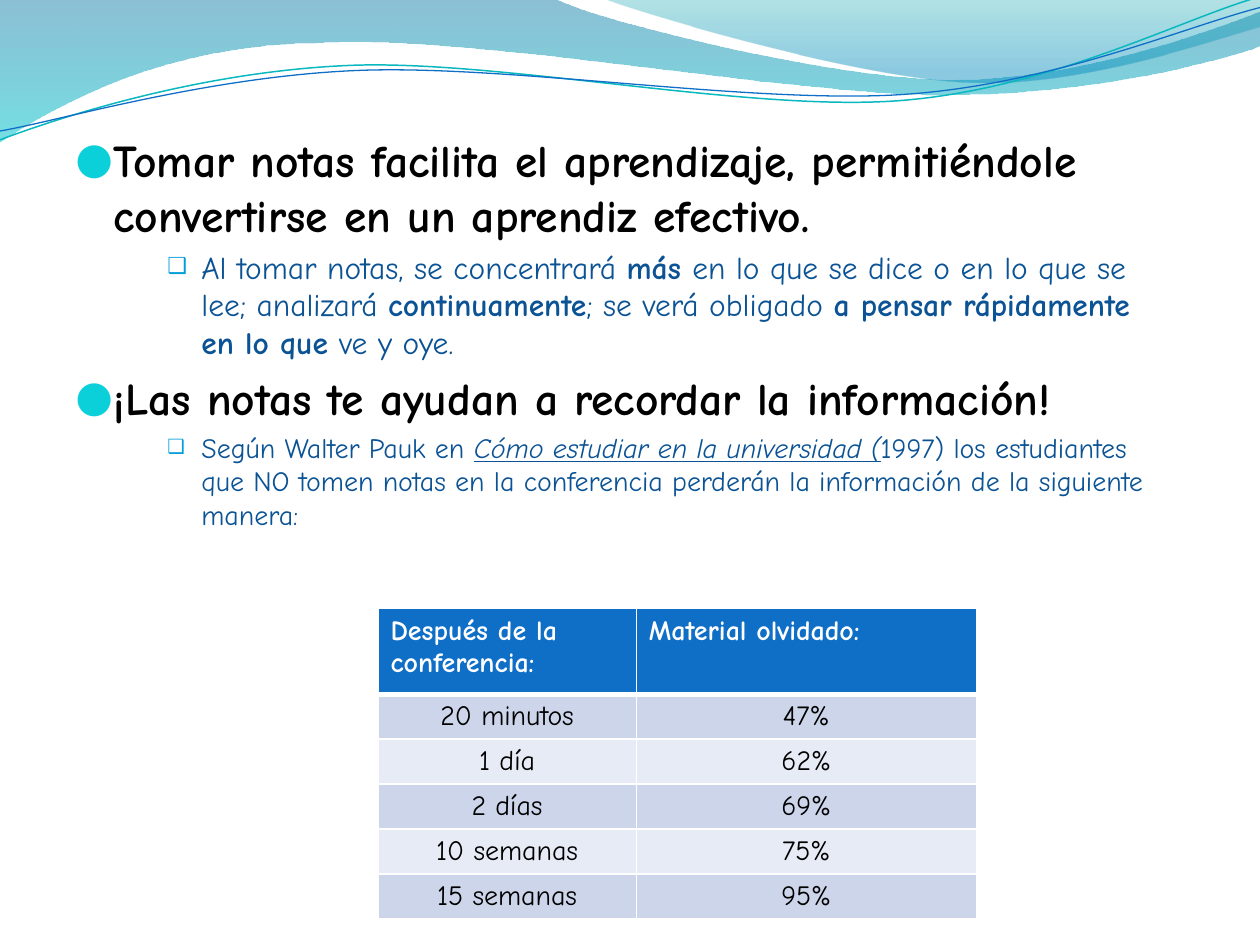
from dataclasses import dataclass

from lxml.etree import SubElement
from pptx import Presentation
from pptx.dml.color import RGBColor as RGB
from pptx.enum.text import PP_ALIGN as Align
from pptx.oxml.ns import qn
from pptx.util import Inches, Pt

FONT = "Comic Neue"
COLORS = {
    "black": "000000", "white": "FFFFFF", "navy": "0B5394", "blue": "0F6FC6",
    "cyan": "0BD0D9", "sky": "009DD9", "teal": "0AB8BF",
    "band_dark": "CCD5EA", "band_light": "E7EBF5",
}


@dataclass
class Stop:
    color: str
    position: float
    opacity: int


@dataclass
class Wave:
    """Start point, then segments: 2 numbers for a line, 6 for a Bézier curve."""
    start: tuple
    segments: list
    stops: tuple = ()
    line: str = ""
    width: float = 0


@dataclass
class Level:
    depth: int
    left: float
    hanging: float
    bullet: str
    bullet_color: str
    bullet_size: int
    color: str


@dataclass
class Span:
    text: str
    bold: bool = False
    cited: bool = False  # italic and underlined


@dataclass
class Item:
    level: Level
    size: int
    spans: list


MAIN = Level(0, 0.3, 0.3, "●", "cyan", 95, "black")
DETAIL = Level(2, 1, 0.27, "❑", "sky", 70, "navy")

WAVES = [
    Wave((0, -0.01), [
        (4.4, -0.01), (4.76, 0.17, 6.64, 0.63, 7.58, 0.63),
        (8.53, 0.63, 9.58, 0.26, 10, 0.09), (10.01, 0.36),
        (9.83, 0.44, 8.7, 0.76, 7.46, 0.75), (6.22, 0.75, 3.82, 0.28, 2.57, 0.34),
        (1.29, 0.35, 0.46, 0.83, -0.01, 1.13)],
        stops=(Stop("0074A1", 0, 45), Stop("00C6CF", 1, 55))),
    Wave((4.79, -0.01), [
        (5.09, 0.11, 6.82, 0.62, 7.69, 0.65), (8.56, 0.69, 9.61, 0.32, 10, 0.21),
        (10, 0)],
        stops=(Stop("00A1A9", 0, 30), Stop("008BBF", 0.8, 45))),
    Wave((0, 1.11), [
        (0.48, 0.93, 1.58, 0.57, 2.77, 0.52), (3.95, 0.47, 5.93, 0.89, 7.13, 0.8),
        (8.33, 0.71, 9.38, 0.15, 9.98, -0.02)], line="teal", width=0.85),
    Wave((0, 1.04), [
        (0.47, 0.96, 1.64, 0.61, 2.83, 0.56), (4.03, 0.51, 5.97, 0.83, 7.17, 0.75),
        (8.36, 0.67, 9.41, 0.21, 10, 0.06)], line="blue", width=0.75),
]

ITEMS = [
    Item(MAIN, 26, [Span("Tomar notas facilita el aprendizaje, permitiéndole "
                         "convertirse en un aprendiz efectivo.", True)]),
    Item(DETAIL, 18, [
        Span("Al tomar notas, se concentrará "), Span("más ", True),
        Span("en lo que se dice o en lo que se lee; analizará "),
        Span("continuamente", True), Span("; se verá obligado "),
        Span("a pensar rápidamente en lo que ", True), Span("ve y oye.")]),
    Item(MAIN, 26, [Span("¡Las notas te ayudan a recordar la información!", True)]),
    Item(DETAIL, 16, [
        Span("Según Walter Pauk en "),
        Span("Cómo estudiar en la universidad (", cited=True),
        Span("1997) los estudiantes que NO tomen notas en la conferencia "
             "perderán la información de la siguiente manera:")]),
]

ROWS = [
    ("Después de la conferencia:", "Material olvidado:"),
    ("20 minutos", "47%"), ("1 día", "62%"), ("2 días", "69%"),
    ("10 semanas", "75%"), ("15 semanas", "95%"),
]


def rgb(name: str) -> RGB:
    return RGB.from_string(COLORS.get(name, name))


def to_emu(values: tuple) -> list:
    """Pair up flat x, y inches as EMU points."""
    return [(Inches(x), Inches(y)) for x, y in zip(values[::2], values[1::2])]


def bend(sp, segments: list) -> None:
    """Join each three line points of a curved segment into one Bézier."""
    lines = sp.element.spPr.iter(qn("a:lnTo"))
    lines = iter(list(lines))
    for seg in segments:
        first = next(lines)
        if len(seg) == 6:
            first.tag = qn("a:cubicBezTo")
            for _ in range(2):
                extra = next(lines)
                first.append(extra[0])
                extra.getparent().remove(extra)


def add_wave(slide, wave: Wave) -> None:
    fb = slide.shapes.build_freeform(*to_emu(wave.start)[0])
    points = [pt for seg in wave.segments for pt in to_emu(seg)]
    fb.add_line_segments(points, close=bool(wave.stops))
    sp = fb.convert_to_shape()
    curve = [seg for seg in wave.segments]
    sp.shadow.inherit = False
    replace_lines(sp, curve)
    if not wave.stops:
        sp.fill.background()
        sp.line.color.rgb = rgb(wave.line)
        sp.line.width = Pt(wave.width)
        return
    sp.line.fill.background()
    sp.fill.gradient()
    sp.fill.gradient_angle = 270  # top to bottom
    for gs, stop in zip(sp.fill.gradient_stops, wave.stops):
        gs.position = stop.position
        gs.color.rgb = rgb(stop.color)
    for clr, stop in zip(sp.element.spPr.iter(qn("a:srgbClr")), wave.stops):
        SubElement(clr, qn("a:alpha"), val=str(stop.opacity * 1000))


def replace_lines(sp, segments: list) -> None:
    """Rewrite the straight outline as lines and Bézier curves, in order."""
    outline = next(sp.element.spPr.iter(qn("a:path")))
    lines = outline.findall(qn("a:lnTo"))
    at = 0
    for seg in segments:
        count = len(seg) // 2
        group, at = lines[at:at + count], at + count
        if count == 3:
            curve = SubElement(outline, qn("a:cubicBezTo"))
            group[0].addprevious(curve)
            for line in group:
                curve.append(line[0])
                outline.remove(line)


def add_run(p, span: Span, size: int, color: str) -> None:
    r = p.add_run()
    r.text = span.text
    f = r.font
    f.name, f.size, f.bold = FONT, Pt(size), span.bold
    f.italic = f.underline = span.cited
    f.color.rgb = rgb(color)


def add_item(p, item: Item) -> None:
    lv = item.level
    p.level = lv.depth
    p.space_before = Pt(0.2 * item.size)
    pPr = p._p.get_or_add_pPr()
    pPr.set("marL", str(Inches(lv.left)))
    pPr.set("indent", str(-Inches(lv.hanging)))
    clr = SubElement(pPr, qn("a:buClr"))
    SubElement(clr, qn("a:srgbClr"), val=COLORS[lv.bullet_color])
    SubElement(pPr, qn("a:buSzPct"), val=str(lv.bullet_size * 1000))
    SubElement(pPr, qn("a:buFont"), typeface=FONT)
    SubElement(pPr, qn("a:buChar"), char=lv.bullet)
    for span in item.spans:
        add_run(p, span, item.size, lv.color)


def set_borders(cell, **widths: float) -> None:
    tcPr = cell._tc.get_or_add_tcPr()
    for side in "LRTB":
        ln = SubElement(tcPr, qn(f"a:ln{side}"), w=str(Pt(widths.get(side, 1))))
        fill = SubElement(ln, qn("a:solidFill"))
        SubElement(fill, qn("a:srgbClr"), val=COLORS["white"])


def fill_cell(cell, text: str, row: int) -> None:
    header = row == 0
    set_borders(cell, T=3 if row == 1 else 1, B=3 if header else 1)
    cell.margin_bottom = Inches(0.04)
    cell.fill.solid()
    band = "band_dark" if row % 2 else "band_light"
    cell.fill.fore_color.rgb = rgb("blue" if header else band)
    p = cell.text_frame.paragraphs[0]
    p.alignment = Align.LEFT if header else Align.CENTER
    add_run(p, Span(text, header), 16, "white" if header else "black")


def main() -> None:
    prs = Presentation()
    prs.slide_width, prs.slide_height = Inches(10), Inches(7.5)
    slide = prs.slides.add_slide(prs.slide_layouts[6])

    # Waves across the top
    for wave in WAVES:
        add_wave(slide, wave)

    # Bulleted text
    box = slide.shapes.add_textbox(Inches(0.5), Inches(1), Inches(8.92), Inches(6.08))
    tf = box.text_frame
    tf.word_wrap = True
    tf.margin_right = Inches(0.15)
    for i, item in enumerate(ITEMS):
        add_item(tf.add_paragraph() if i else tf.paragraphs[0], item)

    # Table of forgotten material
    table = slide.shapes.add_table(len(ROWS), 2, Inches(3), Inches(4.83),
                                   Inches(4.75), Inches(2.23)).table
    for col, width in zip(table.columns, (2.05, 2.7)):
        col.width = Inches(width)
    for i, texts in enumerate(ROWS):
        table.rows[i].height = Inches(0.31 if i else 0.68)
        for j, text in enumerate(texts):
            fill_cell(table.cell(i, j), text, i)

    prs.save("out.pptx")


if __name__ == "__main__":
    main()
